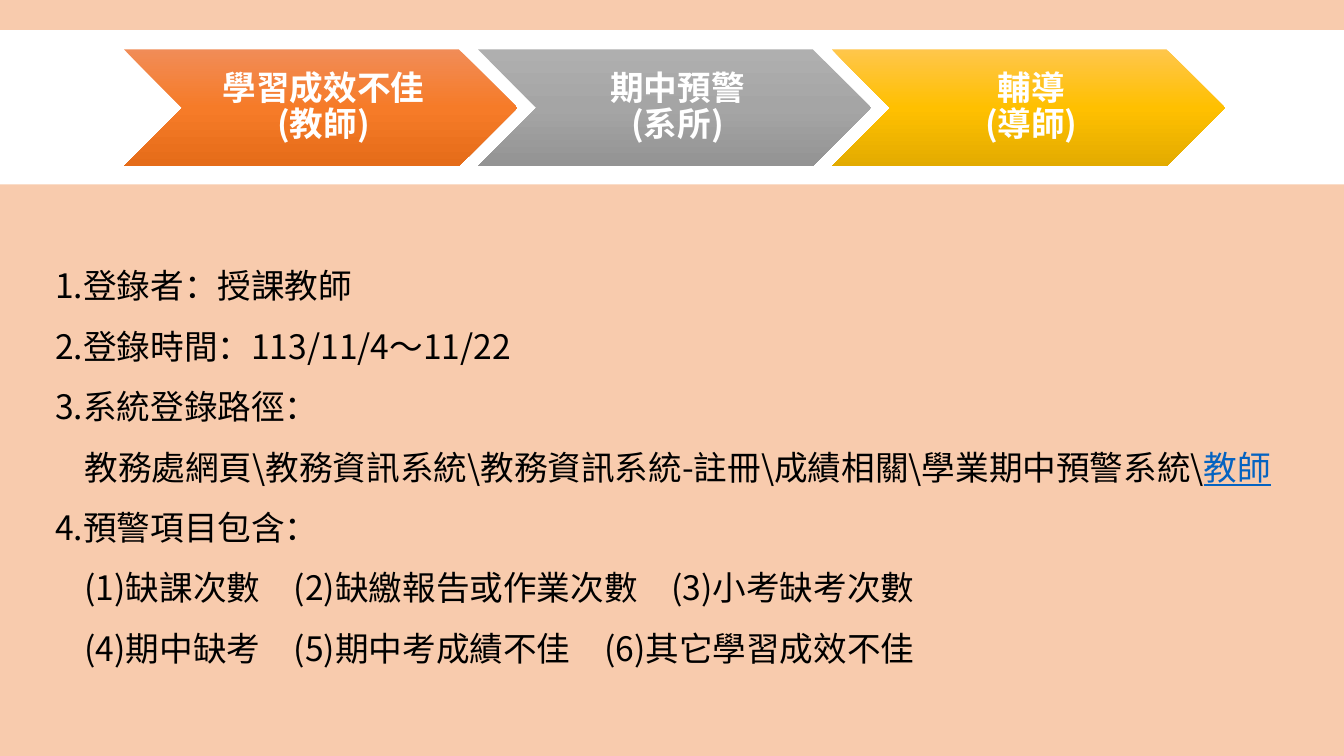
from copy import deepcopy
from pptx import Presentation
from pptx.dml.color import RGBColor as Rgb
from pptx.enum.shapes import MSO_SHAPE as Kind
from pptx.enum.text import MSO_ANCHOR as Anchor, PP_ALIGN as Align
from pptx.oxml.ns import qn
from pptx.util import Inches, Pt

FONT = "Noto Sans CJK SC"
HUES = {
    "peach": "F8CBAD", "white": "FFFFFF", "black": "000000", "link": "0563C1",
    "orange": ["F18C57", "F67B28", "E56C19"],
    "gray": ["AFAFAF", "A5A5A5", "939393"],
    "gold": ["FFC64B", "FFC000", "E3AB00"],
}

deck = Presentation()
deck.slide_width, deck.slide_height = Inches(13.33), Inches(7.5)
slide = deck.slides.add_slide(deck.slide_layouts[6])
shapes = slide.shapes


def write(para, text, hue="black", bold=False, line=False):
    run = para.add_run()
    run.text = text
    font = run.font
    font.name, font.size, font.bold, font.underline = FONT, Pt(24), bold, line
    font.color.rgb = Rgb.from_string(HUES[hue])
    east = font._element.makeelement(qn("a:ea"), {"typeface": FONT})
    font._element.find(qn("a:latin")).addnext(east)


def draw(kind, left, top, wide, high):
    shape = shapes.add_shape(kind, *map(Inches, (left, top, wide, high)))
    shape.shadow.inherit = False
    shape.line.fill.background()
    return shape


for top, high, hue in [(0, 7.5, "peach"), (0.3, 1.53, "white")]:
    band = draw(Kind.RECTANGLE, 0, top, 13.33, high)
    band.fill.solid()
    band.fill.fore_color.rgb = Rgb.from_string(HUES[hue])

LEFT, TOP, WIDE, HIGH = 1.23, 0.49, 3.9, 1.16
STEP = WIDE * 0.9
stages = [("學習成效不佳", "(教師)", "orange"),
          ("期中預警", "(系所)", "gray"),
          ("輔導", "(導師)", "gold")]
for col, (task, role, hue) in enumerate(stages):
    left = LEFT + col * STEP
    arrow = draw(Kind.CHEVRON, left, TOP, WIDE, HIGH)
    arrow.fill.gradient()
    arrow.fill.gradient_angle = 270
    stops = arrow._element.spPr.find(qn("a:gradFill")).find(qn("a:gsLst"))
    stops.append(deepcopy(stops[-1]))
    for rank, (stop, tint) in enumerate(zip(arrow.fill.gradient_stops, HUES[hue])):
        stop.position = rank / 2
        stop.color.rgb = Rgb.from_string(tint)

    label = shapes.add_textbox(*map(Inches, (left + HIGH / 2, TOP, WIDE - HIGH, HIGH)))
    frame = label.text_frame
    frame.word_wrap, frame.vertical_anchor = True, Anchor.MIDDLE
    frame.margin_left = Inches(0.1)
    frame.margin_right = frame.margin_top = frame.margin_bottom = Inches(0.04)
    para = frame.paragraphs[0]
    para.alignment, para.line_spacing = Align.CENTER, 0.9
    write(para, task, hue="white", bold=True)
    para.add_line_break()
    write(para, role, hue="white", bold=True)

steps = [
    (0, "1.登錄者：授課教師", ""),
    (0, "2.登錄時間：113/11/4～11/22", ""),
    (0, "3.系統登錄路徑：", ""),
    (0.29, "教務處網頁\\教務資訊系統\\教務資訊系統-註冊\\成績相關\\學業期中預警系統\\", "教師"),
    (0, "4.預警項目包含：", ""),
    (0.29, "(1)缺課次數　(2)缺繳報告或作業次數　(3)小考缺考次數", ""),
    (0.29, "(4)期中缺考　(5)期中考成績不佳　(6)其它學習成效不佳", ""),
]
body = shapes.add_textbox(*map(Inches, (0.45, 2.38, 12.47, 4.34))).text_frame
body.word_wrap = True
for row, (indent, text, link) in enumerate(steps):
    para = body.add_paragraph() if row else body.paragraphs[0]
    para.line_spacing = 1.5
    para._p.get_or_add_pPr().set("marL", str(Inches(indent)))
    write(para, text)
    if link:
        write(para, link, hue="link", line=True)

deck.save("out.pptx")
